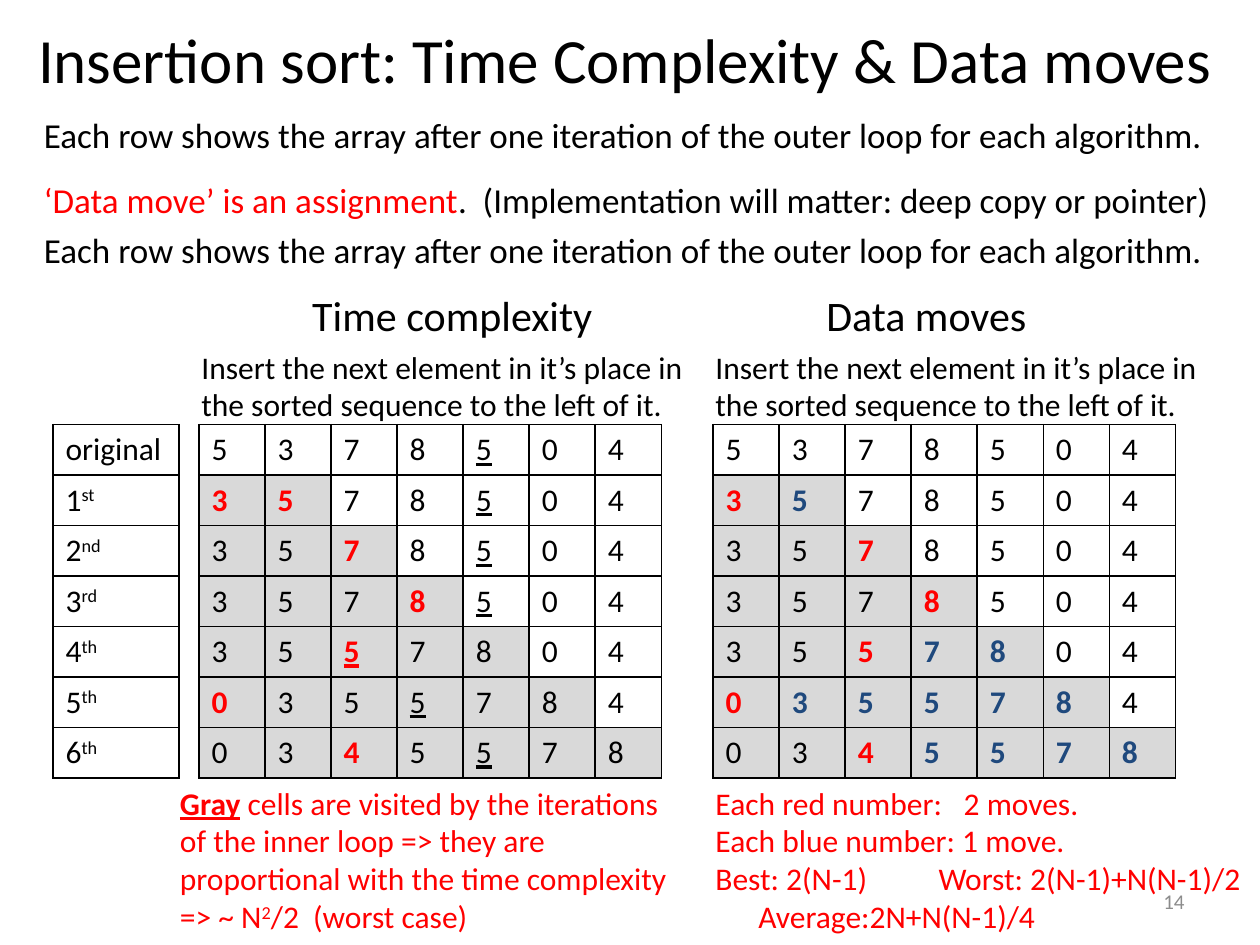
from lxml.etree import SubElement
from pptx import Presentation
from pptx.dml.color import RGBColor
from pptx.enum.text import MSO_ANCHOR, PP_ALIGN
from pptx.oxml.ns import qn
from pptx.util import Inches, Pt

COLORS = {"black": "000000", "red": "FF0000", "blue": "1F497D",
          "gray": "D9D9D9", "number": "8C8C8C"}
FONT = "Calibri"
VALUES = [5, 3, 7, 8, 5, 0, 4]
TRACKED = 4  # start index of the second 5, underlined to show stability
ROW_HEIGHT = 0.4
HINT = ("Insert the next element in it’s place in the sorted sequence "
        "to the left of it.")
INTRO = "Each row shows the array after one iteration of the outer loop for each algorithm."


def rgb(name):
    return RGBColor.from_string(COLORS[name])


def write(paragraph, runs, size=18, color="black", bold=None, underline=None):
    """Fill a paragraph with runs given as text or (text, run style)."""
    font = paragraph.font
    font.name, font.size, font.color.rgb = FONT, Pt(size), rgb(color)
    font.bold, font.underline = bold, underline
    for item in runs:
        text, style = (item, {}) if isinstance(item, str) else item
        run = paragraph.add_run()
        run.text = text
        if "color" in style:
            run.font.color.rgb = rgb(style["color"])
        if "strong" in style:
            run.font.bold = run.font.underline = True
        if "superscript" in style:
            run._r.get_or_add_rPr().set("baseline", "30000")


def add_text(slide, box, paragraphs, size=18, color="black", wrap=True):
    frame = slide.shapes.add_textbox(*map(Inches, box)).text_frame
    frame.word_wrap = wrap
    for i, runs in enumerate(paragraphs):
        paragraph = frame.add_paragraph() if i else frame.paragraphs[0]
        write(paragraph, runs, size, color)
    return frame


def set_tabs(paragraph, stops):
    tabs = SubElement(paragraph._p.get_or_add_pPr(), qn("a:tabLst"))
    paragraph._p.pPr.insert(0, tabs)  # tab stops precede the font defaults
    for stop in stops:
        SubElement(tabs, qn("a:tab"), pos=str(Inches(stop)), algn="l")


def add_borders(cell):
    properties = cell._tc.get_or_add_tcPr()
    for i, side in enumerate(("lnL", "lnR", "lnT", "lnB")):
        line = SubElement(properties, qn(f"a:{side}"), w=str(Pt(1)))
        properties.insert(i, line)
        fill = SubElement(line, qn("a:solidFill"))
        SubElement(fill, qn("a:srgbClr"), val=COLORS["black"])


def add_grid(slide, left, top, width, rows):
    """Draw rows of cells, each cell given as (runs, font style, shaded)."""
    columns = len(rows[0])
    table = slide.shapes.add_table(
        len(rows), columns, Inches(left), Inches(top), Inches(width),
        Inches(ROW_HEIGHT * len(rows))).table
    table.first_row = table.horz_banding = False
    for r, row in enumerate(rows):
        for c, (runs, style, shaded) in enumerate(row):
            cell = table.cell(r, c)
            if shaded:
                cell.fill.solid()
                cell.fill.fore_color.rgb = rgb("gray")
            else:
                cell.fill.background()
            add_borders(cell)
            write(cell.text_frame.paragraphs[0], runs, **style)


def sort_steps():
    """Yield (array, step, insert position); items are (value, start index)."""
    array = [(value, i) for i, value in enumerate(VALUES)]
    yield list(array), 0, None
    for step in range(1, len(array)):
        item = array.pop(step)
        place = sum(value <= item[0] for value, _ in array[:step])
        array.insert(place, item)
        yield list(array), step, place


def sort_rows(show_moves):
    rows = []
    for array, step, place in sort_steps():
        row = []
        for c, (value, start) in enumerate(array):
            style = {}
            if place is not None:
                # The first comparison marks both of its elements
                if c == place or (not show_moves and step == 1 and c <= step):
                    style = {"color": "red", "bold": True}
                elif show_moves and place < c <= step:
                    style = {"color": "blue", "bold": True}
            if not show_moves and start == TRACKED:
                style["underline"] = True
            row.append(([str(value)], style, place is not None and c <= step))
        rows.append(row)
    return rows


def add_title(slide, box):
    title = slide.shapes.title
    title.left, title.top, title.width, title.height = map(Inches, box)
    paragraph = title.text_frame.paragraphs[0]
    write(paragraph, ["Insertion sort: Time Complexity & Data moves"], size=36)
    paragraph.alignment = PP_ALIGN.CENTER


def add_intro(slide, box):
    frame = add_text(slide, box, [
        [INTRO],
        [("‘Data move’ is an assignment", {"color": "red"}),
         ".  (Implementation will matter: deep copy or pointer)"],
        [INTRO]], size=20)
    for paragraph, gap in zip(frame.paragraphs[1:], (13, 5)):
        paragraph.space_before = Pt(gap)


def add_iteration_labels(slide, left, top, width):
    endings = ("st", "nd", "rd", "th", "th", "th")
    labels = [["original"]] + [
        [str(i), (ending, {"superscript": True})]
        for i, ending in enumerate(endings, 1)]
    add_grid(slide, left, top, width, [[(runs, {}, False)] for runs in labels])


def add_panel(slide, left, top, heading, heading_width, show_moves):
    """Heading, hint and sorting table."""
    add_text(slide, (left + 0.88, top, heading_width, 0.5), [[heading]],
             size=24, wrap=False)
    add_text(slide, (left, top + 0.46, 4.25, 0.71), [[HINT]])
    add_grid(slide, left + 0.08, top + 1.12, 3.67, sort_rows(show_moves))


def add_complexity_note(slide, box):
    add_text(slide, box, [[
        ("Gray", {"strong": True}),
        " cells are visited by the iterations of the inner loop => they are "
        "proportional with the time complexity => ~ N",
        ("2", {"superscript": True}), "/2  (worst case)"]], color="red")


def add_moves_note(slide, box):
    frame = add_text(slide, box, [
        ["Each red number:\t2 moves."],
        ["Each blue number: 1 move."],
        ["Best: 2(N-1)\tWorst: 2(N-1)+N(N-1)/2"],
        ["\tAverage:2N+N(N-1)/4"]], color="red")
    for i, stop in ((0, 1.97), (2, 1.77), (3, 0.34)):
        set_tabs(frame.paragraphs[i], [stop])


def add_slide_number(slide, box):
    frame = add_text(slide, box, [["14"]], size=12, color="number")
    frame.vertical_anchor = MSO_ANCHOR.MIDDLE
    frame.paragraphs[0].alignment = PP_ALIGN.RIGHT


def main():
    deck = Presentation()
    deck.slide_width, deck.slide_height = Inches(10), Inches(7.5)
    slide = deck.slides.add_slide(deck.slide_layouts[5])

    # Title and introduction
    add_title(slide, (0.17, 0.08, 9.58, 0.77))
    add_slide_number(slide, (7.17, 6.95, 2.33, 0.4))
    add_intro(slide, (0.25, 0.85, 9.5, 1.75))

    # Sorting tables
    add_iteration_labels(slide, 0.42, 3.37, 1)
    add_panel(slide, 1.5, 2.25, "Time complexity", 2.44, show_moves=False)
    add_panel(slide, 5.58, 2.25, "Data moves", 1.8, show_moves=True)

    # Conclusions
    add_complexity_note(slide, (1.33, 6.17, 4.08, 1.31))
    add_moves_note(slide, (5.58, 6.17, 4.42, 1.31))
    deck.save("out.pptx")


if __name__ == "__main__":
    main()
